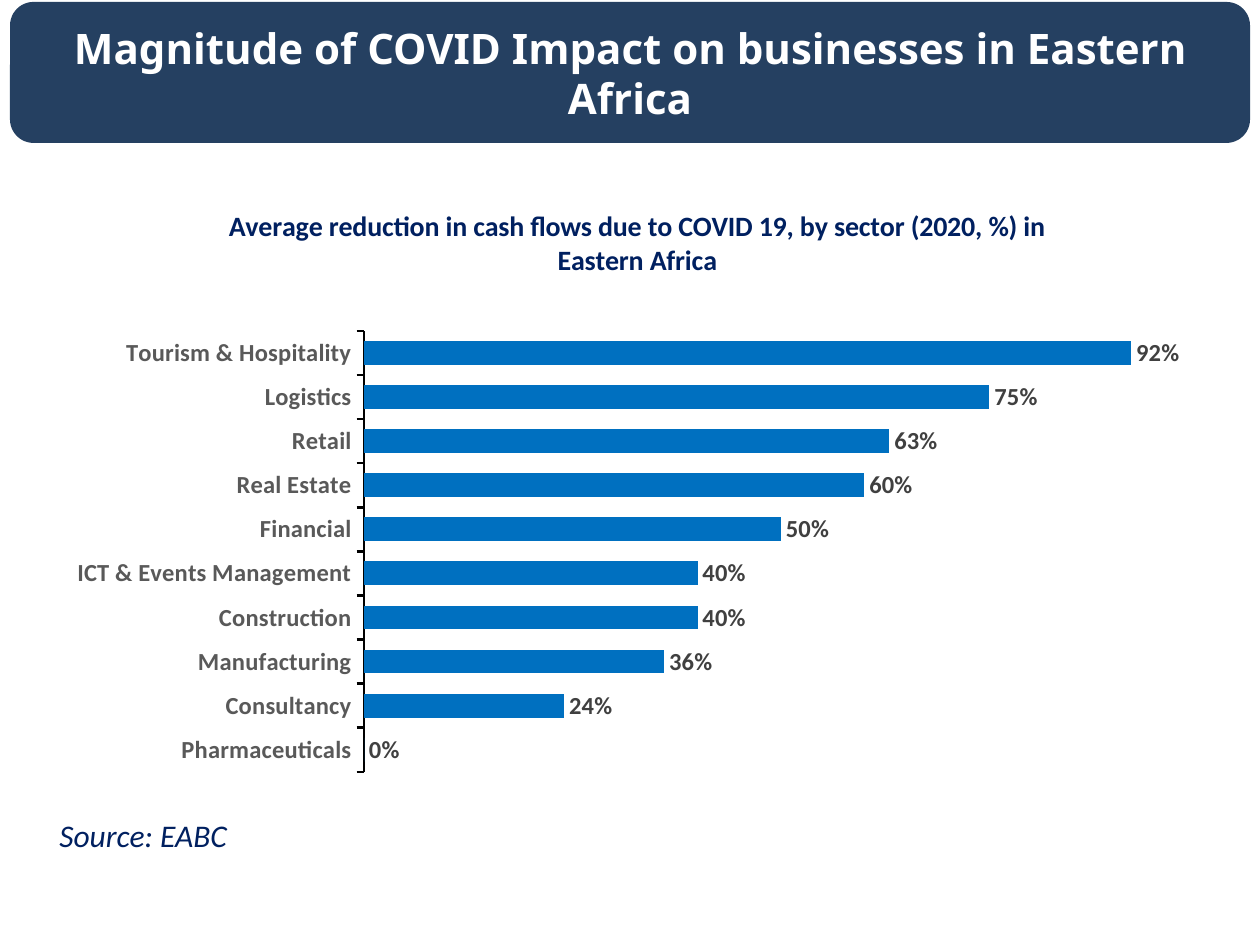
import lxml.etree
import pptx
import pptx.chart.data
import pptx.dml.color
import pptx.enum.chart
import pptx.enum.shapes
import pptx.enum.text
import pptx.oxml
import pptx.oxml.ns
import pptx.util

EMU_PER_PX = 914400 / 126
NAVY = "002060"
CHART_BOX = (54, 185, 1167, 600)
REDUCTIONS = {
    "Pharmaceuticals": 0,
    "Consultancy": 0.24,
    "Manufacturing": 0.36,
    "Construction": 0.4,
    "ICT & Events Management": 0.4,
    "Financial": 0.5,
    "Real Estate": 0.6,
    "Retail": 0.63,
    "Logistics": 0.75,
    "Tourism & Hospitality": 0.92,
}


def px(*lengths):
    """Turn pixel lengths into a list of EMU lengths."""
    return [pptx.util.Emu(round(length * EMU_PER_PX)) for length in lengths]


def rgb(code):
    """Return the colour for a hex string."""
    return pptx.dml.color.RGBColor.from_string(code)


def apply(target, formats):
    """Set each attribute of the target from a dict."""
    for attribute, value in formats.items():
        setattr(target, attribute, value)


def style_font(font, size, color, **formats):
    """Give a font its size, colour and further formats."""
    apply(font, {"name": "Calibri", "size": pptx.util.Pt(size), **formats})
    font.color.rgb = rgb(color)


def fill_text(frame, text, size, color, align, **formats):
    """Write one wrapped, formatted paragraph into a text frame."""
    apply(frame, {
        "word_wrap": True,
        "auto_size": pptx.enum.text.MSO_AUTO_SIZE.SHAPE_TO_FIT_TEXT,
    })
    paragraph = frame.paragraphs[0]
    paragraph.alignment = align
    run = paragraph.add_run()
    run.text = text
    style_font(run.font, size, color, **formats)


def add_banner(slide, text):
    """Add the rounded heading banner."""
    banner = slide.shapes.add_shape(
        pptx.enum.shapes.MSO_SHAPE.ROUNDED_RECTANGLE, *px(10, 2, 1240, 141))
    banner.shadow.inherit = False
    banner.fill.solid()
    banner.fill.fore_color.rgb = rgb("254061")
    banner.line.fill.background()
    margin = pptx.util.Inches(0.1)
    sides = ("left", "top", "right", "bottom")
    apply(banner.text_frame, {f"margin_{side}": margin for side in sides})
    banner.text_frame.vertical_anchor = pptx.enum.text.MSO_ANCHOR.MIDDLE
    fill_text(banner.text_frame, text, 24, "FFFFFF",
              pptx.enum.text.PP_ALIGN.CENTER, name="Noto Sans", bold=True)


def add_source(slide, text):
    """Add the source line below the chart."""
    source = slide.shapes.add_textbox(*px(47, 810, 507, 50))
    fill_text(source.text_frame, text, 18, NAVY,
              pptx.enum.text.PP_ALIGN.LEFT, italic=True)


def place_chart_part(part, previous_tag, left, top, width=None, height=None):
    """Fix the place of a chart part, given in slide pixels."""
    qn = pptx.oxml.ns.qn
    chart_left, chart_top, chart_width, chart_height = CHART_BOX
    settings = {"xMode": "edge", "yMode": "edge",
                "x": (left - chart_left) / chart_width,
                "y": (top - chart_top) / chart_height}
    if width:
        settings = {"layoutTarget": "inner", **settings,
                    "w": width / chart_width, "h": height / chart_height}
    for layout in part.findall(qn("c:layout")):
        part.remove(layout)
    layout = lxml.etree.Element(qn("c:layout"))
    manual = lxml.etree.SubElement(layout, qn("c:manualLayout"))
    for tag, value in settings.items():
        lxml.etree.SubElement(manual, qn(f"c:{tag}")).set("val", str(value))
    if previous_tag:
        part.find(qn(previous_tag)).addnext(layout)
    else:
        part.insert(0, layout)


def fill_chart_area(chart, color):
    """Give the chart area a plain fill without an outline."""
    qn = pptx.oxml.ns.qn
    area = lxml.etree.Element(qn("c:spPr"))
    fill = lxml.etree.SubElement(area, qn("a:solidFill"))
    lxml.etree.SubElement(fill, qn("a:srgbClr")).set("val", color)
    outline = lxml.etree.SubElement(area, qn("a:ln"))
    lxml.etree.SubElement(outline, qn("a:noFill"))
    chart._chartSpace.find(qn("c:txPr")).addprevious(area)


def style_title(chart, lines):
    """Write and place the chart title."""
    chart.has_title = True
    title = chart.chart_title
    title.include_in_layout = False
    title.text_frame.text = "\n".join(lines)
    for paragraph in title.text_frame.paragraphs:
        paragraph.alignment = pptx.enum.text.PP_ALIGN.CENTER
        for run in paragraph.runs:
            style_font(run.font, 16, NAVY, bold=True)
    place_chart_part(title._element, "c:tx", 225, 204)


def style_axes(chart):
    """Format the sector axis and hide the percentage axis."""
    tick_mark = pptx.enum.chart.XL_TICK_MARK
    sectors = chart.category_axis
    apply(sectors, {"major_tick_mark": tick_mark.OUTSIDE,
                    "minor_tick_mark": tick_mark.NONE,
                    "has_major_gridlines": False})
    sectors.format.line.width = pptx.util.Pt(1.5)
    sectors.format.line.color.rgb = rgb("000000")
    style_font(sectors.tick_labels.font, 14, "595959", bold=True)
    apply(chart.value_axis, {"minimum_scale": 0, "maximum_scale": 1,
                             "has_major_gridlines": False, "visible": False})


def style_bars(plot):
    """Format the bars and their value labels."""
    apply(plot, {"gap_width": 86, "overlap": -45,
                 "vary_by_categories": False, "has_data_labels": True})
    bars = plot.series[0].format
    bars.fill.solid()
    bars.fill.fore_color.rgb = rgb("0070C0")
    labels = plot.data_labels
    apply(labels, {
        "show_value": True,
        "number_format": "0%",
        "number_format_is_linked": False,
        "position": pptx.enum.chart.XL_LABEL_POSITION.OUTSIDE_END,
    })
    style_font(labels.font, 14, "404040", bold=True)


def add_reduction_chart(slide):
    """Add the bar chart of cash flow reductions by sector."""
    reductions = pptx.chart.data.CategoryChartData(number_format="0%")
    reductions.categories = list(REDUCTIONS)
    reductions.add_series("Series 1", list(REDUCTIONS.values()))
    chart = slide.shapes.add_chart(
        pptx.enum.chart.XL_CHART_TYPE.BAR_CLUSTERED,
        *px(*CHART_BOX), reductions).chart
    chart.has_legend = False
    style_font(chart.font, 8, "000000")
    fill_chart_area(chart, "FFFFFF")
    style_title(chart, [
        "Average reduction in cash flows due to COVID 19, by sector (2020, %) in",
        "Eastern Africa",
    ])
    style_axes(chart)
    style_bars(chart.plots[0])
    place_chart_part(chart._chartSpace.chart.plotArea, None,
                     364, 331, 834, 441)


def main():
    """Build and save the slide."""
    deck = pptx.Presentation()
    apply(deck, dict(zip(("slide_width", "slide_height"), px(1260, 945))))
    slide = deck.slides.add_slide(deck.slide_layouts[6])
    add_banner(slide, "Magnitude of COVID Impact on businesses in Eastern Africa")
    add_source(slide, "Source: EABC")
    add_reduction_chart(slide)
    deck.save("out.pptx")


if __name__ == "__main__":
    main()
